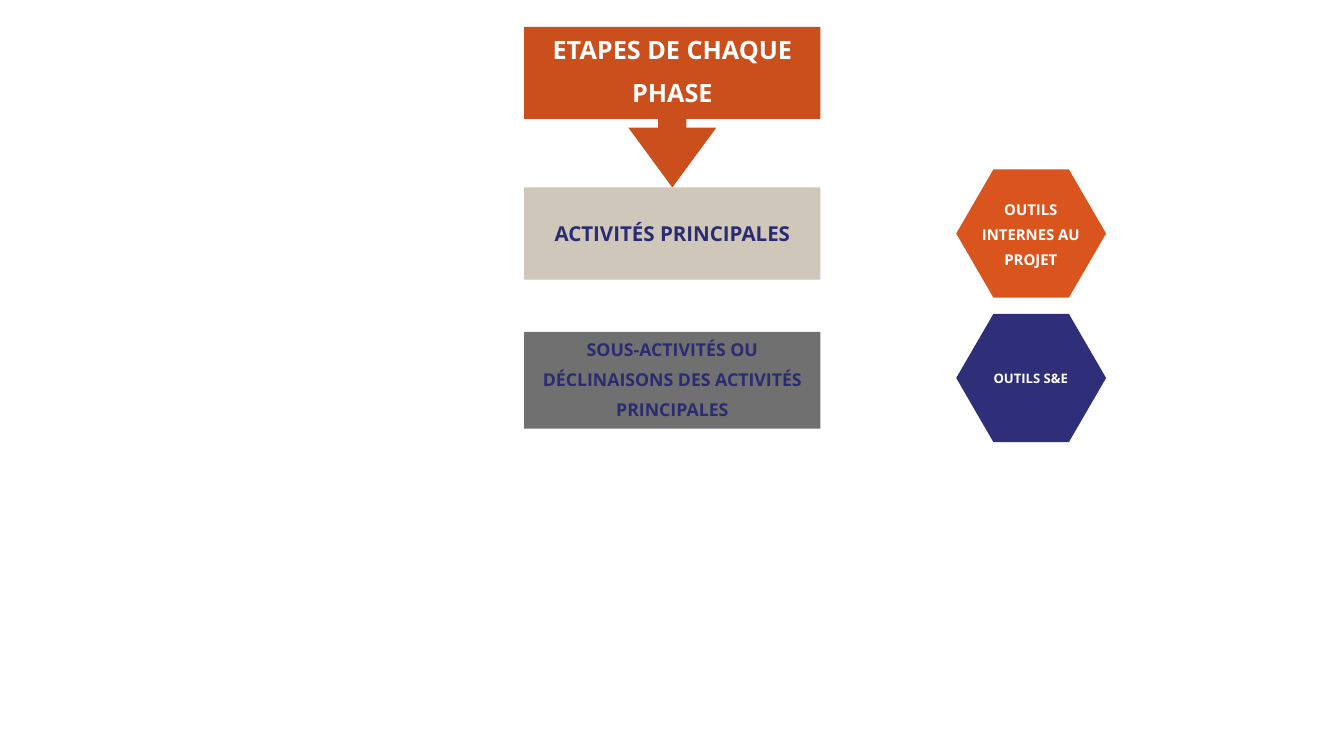
from pptx import Presentation
from pptx.dml.color import RGBColor
from pptx.enum import shapes, text
from pptx.util import Inches, Pt

RUST = RGBColor(0xCA, 0x4F, 0x1C)
ORANGE = RGBColor(0xDA, 0x55, 0x1E)
SAND = RGBColor(0xCF, 0xC7, 0xBA)
GREY = RGBColor(0x70, 0x70, 0x70)
NAVY = RGBColor(0x2E, 0x2E, 0x79)
INK = RGBColor(0x2B, 0x2B, 0x72)
WHITE = RGBColor(0xFF, 0xFF, 0xFF)

FONT = "Open Sans"
BOX_LEFT, BOX_W = 7.8, 4.41
HEX_LEFT, HEX_W, HEX_H = 14.23, 2.23, 1.91
HEX_TEXT_LEFT, HEX_TEXT_W = 14.54, 1.6


def add_filled(s, kind, left, top, width, height, fill, adjustments=()):
    sp = s.shapes.add_shape(kind, Inches(left), Inches(top),
                            Inches(width), Inches(height))
    sp.shadow.inherit = False
    sp.fill.solid()
    sp.fill.fore_color.rgb = fill
    sp.line.fill.background()
    for i, value in enumerate(adjustments):
        sp.adjustments[i] = value
    return sp


def add_label(s, words, left, top, width, height, *, size, color):
    tb = s.shapes.add_textbox(Inches(left), Inches(top),
                              Inches(width), Inches(height))
    tf = tb.text_frame
    tf.word_wrap = True
    tf.vertical_anchor = text.MSO_ANCHOR.MIDDLE
    tf.margin_left = tf.margin_right = Inches(0.06)
    tf.margin_top = tf.margin_bottom = Inches(0.06)
    p = tf.paragraphs[0]
    p.alignment = text.PP_ALIGN.CENTER
    p.line_spacing = 1.4
    r = p.add_run()
    r.text = words
    r.font.name = FONT
    r.font.size = Pt(size)
    r.font.bold = True
    r.font.color.rgb = color
    return tb


def add_box(s, words, top, height, rise, fill, **fmt):
    """Rectangle with a label that starts `rise` inches above it."""
    add_filled(s, shapes.MSO_SHAPE.RECTANGLE, BOX_LEFT, top, BOX_W, height, fill)
    add_label(s, words, BOX_LEFT, top - rise, BOX_W, height + rise, **fmt)


def add_hexagon(s, words, top, fill, size):
    rise = 0.08
    add_filled(s, shapes.MSO_SHAPE.HEXAGON, HEX_LEFT, top, HEX_W, HEX_H, fill,
               [0.29])
    add_label(s, words, HEX_TEXT_LEFT, top - rise, HEX_TEXT_W, HEX_H + rise,
              size=size, color=WHITE)


def main():
    prs = Presentation()
    prs.slide_width, prs.slide_height = Inches(20), Inches(11.25)
    s = prs.slides.add_slide(prs.slide_layouts[6])

    # Arrow from the steps to the main activities
    add_filled(s, shapes.MSO_SHAPE.DOWN_ARROW, 9.35, 0.49, 1.31, 2.3, RUST,
               [0.32, 0.68])

    # Levels of the process
    add_box(s, "ETAPES DE CHAQUE PHASE", 0.4, 1.37, 0.24, RUST,
            size=27, color=WHITE)
    add_box(s, "ACTIVITÉS PRINCIPALES", 2.79, 1.37, 0.16, SAND,
            size=22, color=INK)
    add_box(s, "SOUS-ACTIVITÉS OU DÉCLINAISONS DES ACTIVITÉS PRINCIPALES",
            4.94, 1.44, 0.16, GREY, size=19, color=INK)

    # Tools
    add_hexagon(s, "OUTILS S&E", 4.67, NAVY, 14)
    add_hexagon(s, "OUTILS INTERNES AU PROJET", 2.52, ORANGE, 16)

    prs.save("out.pptx")


if __name__ == "__main__":
    main()
